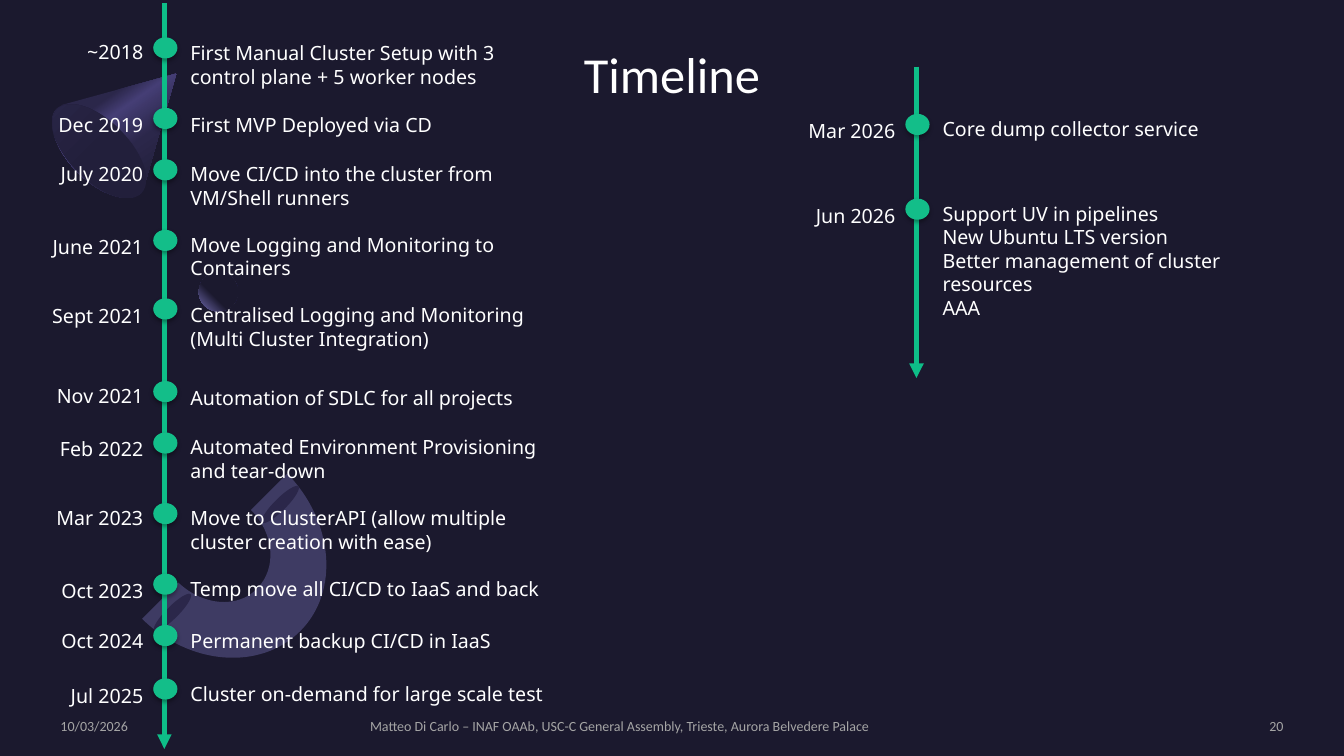
import pptx
import pptx.dml.color
import pptx.enum.shapes
import pptx.enum.text
import pptx.oxml
import pptx.oxml.ns
import pptx.util

RGB = pptx.dml.color.RGBColor
ALIGN = pptx.enum.text.PP_ALIGN
ANCHOR = pptx.enum.text.MSO_ANCHOR
SHAPE = pptx.enum.shapes.MSO_SHAPE
qn = pptx.oxml.ns.qn

EMU_PER_PX = 9144  # 100 px to the inch
NIGHT = RGB(0x1B, 0x19, 0x2E)
DUSK = RGB(0x22, 0x1F, 0x3B)
INDIGO = RGB(0x2B, 0x27, 0x4A)
VIOLET = RGB(0x45, 0x3E, 0x75)
LILAC = RGB(0x74, 0x6E, 0xB3)
GREEN = RGB(0x13, 0xBE, 0x89)
SPINE_GREEN = RGB(0x0E, 0xBE, 0x88)
GREY = RGB(0xA5, 0xA5, 0xA5)
WHITE = RGB(0xFF, 0xFF, 0xFF)

# date, dot top, date top, text top, text height, text
HISTORY = [
    ("~2018", 37, 35, 36, 52, "First Manual Cluster Setup with 3 control plane + 5 worker nodes"),
    ("Dec 2019", 107, 107, 107, 30, "First MVP Deployed via CD"),
    ("July 2020", 158, 156, 156, 52, "Move CI/CD into the cluster from VM/Shell runners"),
    ("June 2021", 228, 228, 226, 52, "Move Logging and Monitoring to Containers"),
    ("Sept 2021", 296, 297, 296, 62, "Centralised Logging and Monitoring (Multi Cluster Integration)"),
    ("Nov 2021", 378, 376, 378, 30, "Automation of SDLC for all projects"),
    ("Feb 2022", 429, 429, 427, 52, "Automated Environment Provisioning and tear-down"),
    ("Mar 2023", 499, 497, 497, 52, "Move to ClusterAPI (allow multiple cluster creation with ease)"),
    ("Oct 2023", 569, 569, 567, 34, "Temp move all CI/CD to IaaS and back"),
    ("Oct 2024", 620, 619, 619, 34, "Permanent backup CI/CD in IaaS"),
    ("Jul 2025", 673, 674, 672, 34, "Cluster on-demand for large scale test"),
]
PLANS = [
    ("Mar 2026", 113, 113, 111, 34, "Core dump collector service"),
    ("Jun 2026", 197, 197, 195, 128,
     "Support UV in pipelines\nNew Ubuntu LTS version\n"
     "Better management of cluster resources\nAAA"),
]


def px(*lengths):
    return [pptx.util.Emu(round(length * EMU_PER_PX)) for length in lengths]


def xml(tag, inner="", attributes=""):
    return pptx.oxml.parse_xml(
        f'<a:{tag} {pptx.oxml.ns.nsdecls("a")} {attributes}>{inner}</a:{tag}>')


def write(frame, text, size=14, font="Noto Sans", color=WHITE, align=ALIGN.LEFT,
          anchor=ANCHOR.TOP, inset=(10, 5), grow=False):
    frame.word_wrap = True
    frame.vertical_anchor = anchor
    frame.margin_left, frame.margin_top = frame.margin_right, frame.margin_bottom = px(*inset)
    kinds = pptx.enum.text.MSO_AUTO_SIZE
    frame.auto_size = kinds.SHAPE_TO_FIT_TEXT if grow else kinds.NONE
    for index, line in enumerate(text.split("\n")):
        para = frame.add_paragraph() if index else frame.paragraphs[0]
        para.alignment = align
        span = para.add_run()
        span.text = line
        span.font.size = pptx.util.Pt(size)
        span.font.name = font
        span.font.color.rgb = color


def paint(shape, color):
    shape.shadow.inherit = False
    shape.line.fill.background()
    shape.fill.solid()
    shape.fill.fore_color.rgb = color


def paint_gradient(shape, stops, direction):
    """Fill with (percent, colour) stops; direction is the XML of the gradient's course."""
    paint(shape, stops[0][1])
    marks = "".join(f'<a:gs pos="{percent * 1000}"><a:srgbClr val="{color}"/></a:gs>'
                    for percent, color in stops)
    solid = shape._element.spPr.find(qn("a:solidFill"))
    gradient = xml("gradFill", f"<a:gsLst>{marks}</a:gsLst>{direction}", 'rotWithShape="1"')
    solid.getparent().replace(solid, gradient)


def ellipse(shapes, left, top, width, height, rotation=0):
    shape = shapes.add_shape(SHAPE.OVAL, *px(left, top, width, height))
    shape.rotation = rotation
    return shape


def outline(shapes, start, segments):
    """Closed outline; a segment is one point (line) or three (Bézier curve)."""
    builder = shapes.build_freeform(*start, scale=EMU_PER_PX)
    builder.add_line_segments([point for segment in segments for point in segment], close=True)
    shape = builder.convert_to_shape()
    lines = iter(list(shape._element.spPr.iter(qn("a:lnTo"))))
    for segment in segments:
        parts = [next(lines) for _ in segment]
        if len(parts) == 3:
            curve = xml("cubicBezTo")
            parts[0].addprevious(curve)
            for part in parts:
                curve.append(part[0])
                part.getparent().remove(part)
    return shape


def draw_cone(shapes):
    side = outline(shapes, (175, 73), [
        [(143, 185)], [(143, 186)],
        [(142, 188), (141, 190), (140, 191)],
        [(128, 203), (100, 194), (77, 171)],
        [(54, 148), (45, 119), (56, 108)],
        [(58, 107), (59, 105), (61, 105)],
        [(62, 104)]])
    paint_gradient(side, [(0, INDIGO), (30, INDIGO), (40, VIOLET), (60, INDIGO), (100, NIGHT)],
                   f'<a:lin ang="{55 * 60000}" scaled="0"/>')
    base = ellipse(shapes, 69, 91, 59, 118, 135)
    paint_gradient(base, [(0, DUSK), (50, DUSK), (100, INDIGO)],
                   f'<a:lin ang="{90 * 60000}" scaled="0"/>')
    return [side, base]


def draw_ball(shapes):
    ball = ellipse(shapes, 197, 270, 39, 39)
    paint_gradient(ball, [(0, NIGHT), (60, NIGHT), (100, LILAC)],
                   '<a:path path="circle"><a:fillToRect l="100000" b="100000"/></a:path>')
    return [ball]


def draw_half_ring(shapes):
    ring = outline(shapes, (298, 626), [
        [(337, 587), (331, 517), (285, 470)],
        [(249, 506)],
        [(272, 529), (275, 564), (255, 584)],
        [(236, 604), (201, 601), (177, 578)],
        [(141, 614)],
        [(188, 660), (258, 666), (298, 626)]])
    paint(ring, LILAC)
    color = ring._element.spPr.find(".//" + qn("a:srgbClr"))
    color.append(xml("alpha", attributes='val="40000"'))
    ends = [ellipse(shapes, left, top, 12, 51, 45) for left, top in ((272, 475), (165, 582))]
    for end in ends:
        paint(end, INDIGO)
    return [ring, *ends]


def decorate_layout(page):
    """Draw the ornaments and hand them to the layout, behind the slide's own parts."""
    tree = page.slide_layout.shapes._spTree
    for draw in (draw_cone, draw_ball, draw_half_ring):
        for shape in draw(page.shapes):
            tree.append(shape._element)


def draw_spine(shapes, x, top, bottom):
    spine = shapes.add_connector(pptx.enum.shapes.MSO_CONNECTOR.STRAIGHT,
                                 *px(x, top, x, bottom))
    spine.line.color.rgb = SPINE_GREEN
    spine.line.width = pptx.util.Pt(3.5)
    spine.line._get_or_add_ln().append(xml("tailEnd", attributes='type="triangle"'))
    spine._element.spPr.append(xml("effectLst"))


def draw_milestone(shapes, x, date, dot_top, date_top, text_top, text_height, text):
    group = shapes.add_group_shape().shapes
    dot = ellipse(group, x - 11, dot_top, 24, 21)
    paint(dot, GREEN)
    shade = '<a:srgbClr val="000000"><a:alpha val="35000"/></a:srgbClr>'
    effects = dot._element.spPr.find(qn("a:effectLst"))
    effects.append(xml("outerShdw", shade,
                       'blurRad="39370" dist="22860" dir="5400000" rotWithShape="0"'))
    date_box = group.add_textbox(*px(x - 129, date_top, 118, 30))
    write(date_box.text_frame, date, align=ALIGN.RIGHT, grow=True)
    text_box = group.add_textbox(*px(x + 16, text_top, 371, text_height))
    write(text_box.text_frame, text, grow=True)


def draw_timeline(shapes, x, top, bottom, milestones):
    draw_spine(shapes, x, top, bottom)
    for milestone in milestones:
        draw_milestone(shapes, x, *milestone)


def draw_footer(shapes, top, height):
    parts = [
        (60, 288, ALIGN.LEFT, "10/03/2026"),
        (367, 698, ALIGN.LEFT,
         "Matteo Di Carlo – INAF OAAb, USC-C General Assembly, Trieste, Aurora Belvedere Palace"),
        (1088, 185, ALIGN.RIGHT, "20"),
    ]
    for left, width, align, text in parts:
        box = shapes.add_textbox(*px(left, top, width, height))
        write(box.text_frame, text, size=10, font="Calibri", color=GREY, align=align,
              anchor=ANCHOR.MIDDLE, inset=(0, 0))


def set_title(title, text):
    title.left, title.top, title.width, title.height = px(60, 43, 1213, 122)
    write(title.text_frame, text, size=36, font="Calibri", align=ALIGN.CENTER, inset=(0, 0))


def timeline_slide(deck):
    page = deck.slides.add_slide(deck.slide_layouts[5])
    page.background.fill.solid()
    page.background.fill.fore_color.rgb = NIGHT
    decorate_layout(page)
    set_title(page.shapes.title, "Timeline")
    draw_footer(page.shapes, 712, 17)
    draw_timeline(page.shapes, 163, 3, 743, HISTORY)
    draw_timeline(page.shapes, 909, 66, 375, PLANS)


def main():
    deck = pptx.Presentation()
    deck.slide_width, deck.slide_height = px(1333, 750)
    timeline_slide(deck)
    deck.save("out.pptx")


if __name__ == "__main__":
    main()
